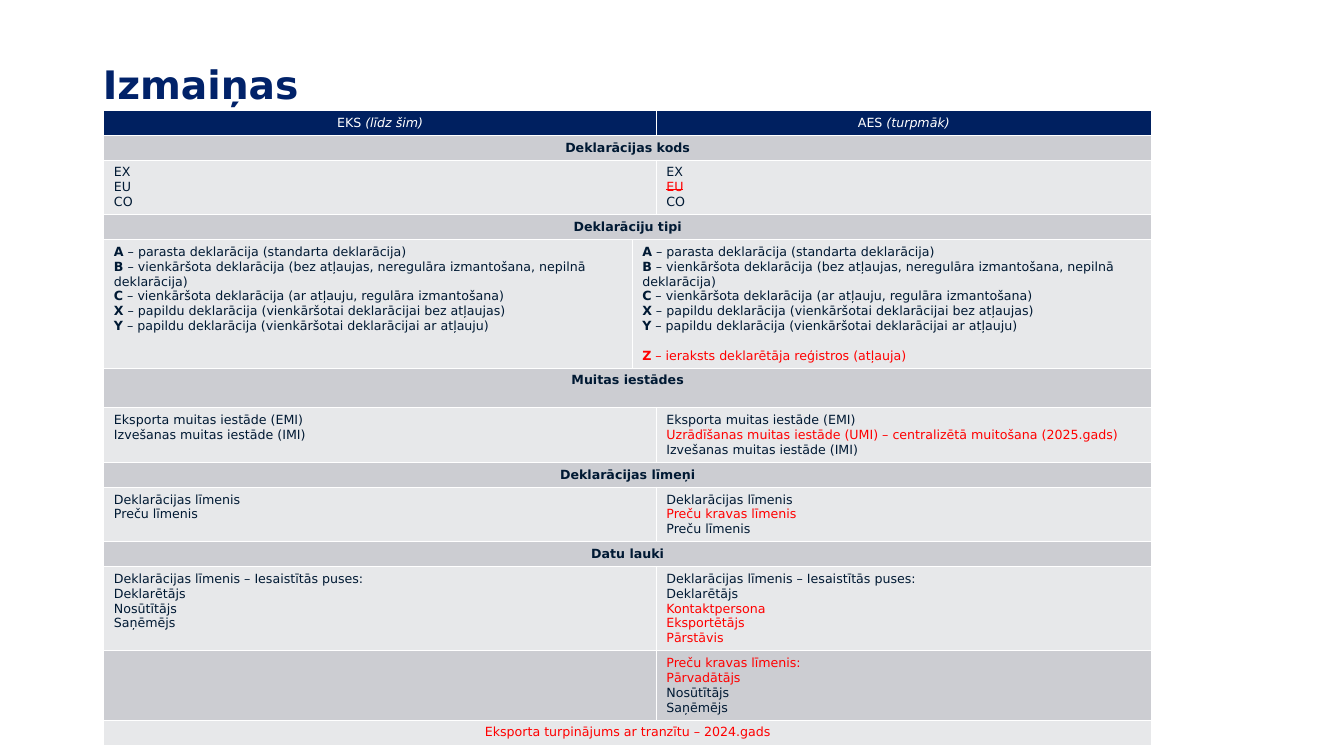
"""Builds the slide comparing export declarations in EKS and AES."""
from lxml import etree
from pptx import Presentation, util as u
from pptx.dml.color import RGBColor
from pptx.enum import text
from pptx.oxml import ns

COLORS = {"title": "012269", "header": "002060", "section": "CCCDD2", "body": "E7E8EA",
          "ink": "001933", "new": "FF0000", "white": "FFFFFF"}
LINE, PADDING = 10.57, 7.2
COLUMNS = (39.31, 1.05, 36.83)


class Slide:
    """Holds the style and the current slide; lengths are percent of its size."""

    font = "DejaVu Sans"

    def __init__(self, deck):
        self.deck = deck
        self.page = deck.slides.add_slide(deck.slide_layouts[5])

    def across(self, share):
        return round(self.deck.slide_width * share / 100)

    def down(self, share):
        return round(self.deck.slide_height * share / 100)

    def run(self, paragraph, words, size, color, marks=""):
        run = paragraph.add_run()
        run.text = words
        font = run.font
        font.name, font.size = self.font, u.Pt(size)
        font.bold, font.italic = "b" in marks, "i" in marks
        font.color.rgb = RGBColor.from_string(COLORS["new" if "r" in marks else color])
        if "s" in marks:
            font._element.set("strike", "sngStrike")

    def title(self, words, left, top, width, height):
        heading = self.page.shapes.title
        heading.left, heading.top = self.across(left), self.down(top)
        heading.width, heading.height = self.across(width), self.down(height)
        frame = heading.text_frame
        frame.auto_size = text.MSO_AUTO_SIZE.NONE
        frame.vertical_anchor = text.MSO_ANCHOR.MIDDLE
        paragraph = frame.paragraphs[0]
        paragraph.alignment = text.PP_ALIGN.LEFT
        paragraph.line_spacing = 0.9
        self.run(paragraph, words, 28, "title", "b")

    def table(self, rows, left, top):
        heights = [u.Pt(lines * LINE + PADDING) for lines, *_ in rows]
        grid = self.page.shapes.add_table(
            len(rows), len(COLUMNS), self.across(left), self.down(top),
            self.across(sum(COLUMNS)), sum(heights)).table
        grid.horz_banding = False
        for column, share in zip(grid.columns, COLUMNS):
            column.width = self.across(share)
        for index, (_, fill, starts, contents) in enumerate(rows):
            grid.rows[index].height = heights[index]
            for column in range(len(COLUMNS)):
                self.cell(grid.cell(index, column), fill)
            for start, end, content in zip(starts, (*starts[1:], len(COLUMNS)), contents):
                if end - start > 1:
                    grid.cell(index, start).merge(grid.cell(index, end - 1))
                centred = fill == "header" or len(starts) == 1
                self.fill_in(grid.cell(index, start), content, fill, centred)

    def cell(self, cell, fill):
        properties = cell._tc.get_or_add_tcPr()
        for side in ("lnL", "lnR", "lnT", "lnB"):
            border = etree.SubElement(properties, ns.qn("a:" + side), w=str(u.Pt(1)))
            solid = etree.SubElement(border, ns.qn("a:solidFill"))
            etree.SubElement(solid, ns.qn("a:srgbClr"), val=COLORS["white"])
        cell.fill.solid()
        cell.fill.fore_color.rgb = RGBColor.from_string(COLORS[fill])

    def fill_in(self, cell, content, fill, centred):
        for index, runs in enumerate(content):
            frame = cell.text_frame
            paragraph = frame.add_paragraph() if index else frame.paragraphs[0]
            if centred:
                paragraph.alignment = text.PP_ALIGN.CENTER
            if any("g" in marks for _, marks in runs):
                paragraph.space_before = u.Pt(LINE)
            for words, marks in runs:
                self.run(paragraph, words, 9, "white" if fill == "header" else "ink", marks)


def plain(*lines):
    """Turns lines into one-run paragraphs, red where marked with a plus."""
    return [[(line.lstrip("+"), "r" if line.startswith("+") else "")] for line in lines]


def section(words, lines=1):
    """Describes a heading row across the whole table."""
    return lines, "section", (0,), [[[(words, "b")]]]


def pair(lines, before, after, fill="body"):
    """Describes a row that sets the old system against the new one."""
    return lines, fill, (0, 2), [before, after]


def main():
    """Lays out the slide and saves it."""
    deck = Presentation()
    deck.slide_width, deck.slide_height = u.Inches(13.33), u.Inches(7.5)
    types = [[(code, "b"), (" – " + meaning, "")] for code, meaning in (
        ("A", "parasta deklarācija (standarta deklarācija)"),
        ("B", "vienkāršota deklarācija (bez atļaujas, neregulāra izmantošana, nepilnā deklarācija)"),
        ("C", "vienkāršota deklarācija (ar atļauju, regulāra izmantošana)"),
        ("X", "papildu deklarācija (vienkāršotai deklarācijai bez atļaujas)"),
        ("Y", "papildu deklarācija (vienkāršotai deklarācijai ar atļauju)"))]
    registry_type = [("Z", "brg"), (" – ieraksts deklarētāja reģistros (atļauja)", "r")]
    parties = ("Deklarācijas līmenis – Iesaistītās puses:", "Deklarētājs")
    traders = ("Nosūtītājs", "Saņēmējs")
    export_office, exit_office = "Eksporta muitas iestāde (EMI)", "Izvešanas muitas iestāde (IMI)"
    rows = [
        pair(1, [[("EKS ", ""), ("(līdz šim)", "i")]],
             [[("AES ", ""), ("(turpmāk)", "i")]], "header"),
        section("Deklarācijas kods"),
        pair(3, plain("EX", "EU", "CO"), [[("EX", "")], [("EU", "rs")], [("CO", "")]]),
        section("Deklarāciju tipi"),
        (8, "body", (0, 1), [types, types + [registry_type]]),
        section("Muitas iestādes", 2),
        pair(3, plain(export_office, exit_office),
             plain(export_office,
                   "+Uzrādīšanas muitas iestāde (UMI) – centralizētā muitošana (2025.gads)",
                   exit_office)),
        section("Deklarācijas līmeņi"),
        pair(3, plain("Deklarācijas līmenis", "Preču līmenis"),
             plain("Deklarācijas līmenis", "+Preču kravas līmenis", "Preču līmenis")),
        section("Datu lauki"),
        pair(5, plain(*parties, *traders),
             plain(*parties, "+Kontaktpersona", "+Eksportētājs", "+Pārstāvis")),
        pair(4, [], plain("+Preču kravas līmenis:", "+Pārvadātājs", *traders), "section"),
        (1, "body", (0,), [plain("+Eksporta turpinājums ar tranzītu – 2024.gads")]),
    ]
    slide = Slide(deck)
    slide.title("Izmaiņas", 6.9, 1.87, 86.27, 19.33)
    slide.table(rows, 7.73, 14.6)
    deck.save("out.pptx")


if __name__ == "__main__":
    main()
